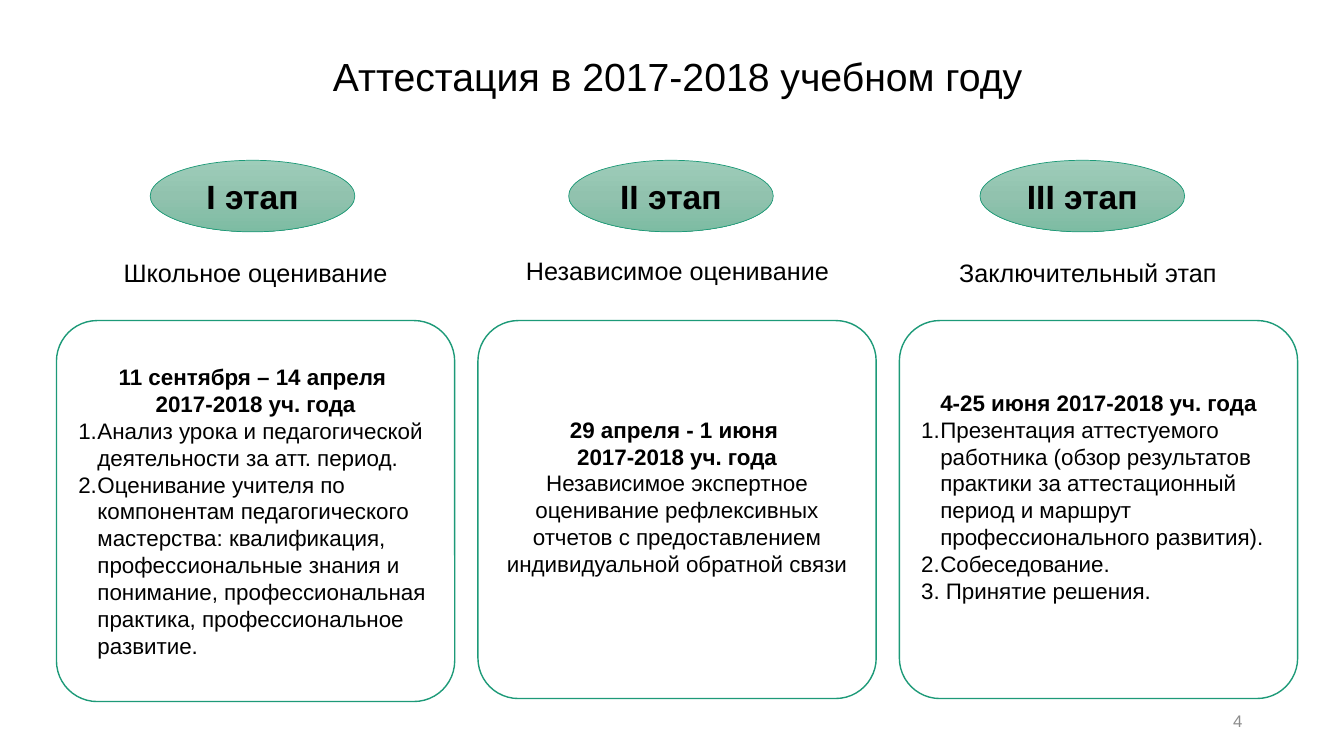
from copy import deepcopy

from lxml import etree
from pptx import Presentation
from pptx.dml.color import RGBColor
from pptx.enum import shapes, text
from pptx.oxml.ns import qn
from pptx.util import Inches, Pt

BLACK = RGBColor(0x00, 0x00, 0x00)
WHITE = RGBColor(0xFF, 0xFF, 0xFF)
GREY = RGBColor(0x8C, 0x8C, 0x8C)
GREEN = RGBColor(0x1D, 0x9A, 0x78)
OVAL_SHADES = [
    (0, RGBColor(0x9E, 0xCD, 0xBA)),
    (0.5, RGBColor(0x91, 0xC2, 0xAE)),
    (1, RGBColor(0x7D, 0xBC, 0xA3)),
]
CENTER, LEFT, RIGHT = text.PP_ALIGN.CENTER, text.PP_ALIGN.LEFT, text.PP_ALIGN.RIGHT
MIDDLE, TOP = text.MSO_ANCHOR.MIDDLE, text.MSO_ANCHOR.TOP

presentation = Presentation()
presentation.slide_width = Inches(13.33)
presentation.slide_height = Inches(7.5)
slide = presentation.slides.add_slide(presentation.slide_layouts[6])


def style(paragraph, size, align=CENTER, bold=False, color=BLACK):
    paragraph.alignment = align
    for run in paragraph.runs:
        run.font.name = "Arial"
        run.font.size = Pt(size)
        run.font.bold = bold
        run.font.color.rgb = color


def add_label(words, box, size, align=CENTER, anchor=TOP, color=BLACK, wrap=True):
    label = slide.shapes.add_textbox(*map(Inches, box))
    label.text_frame.word_wrap = wrap
    label.text_frame.vertical_anchor = anchor
    label.text_frame.text = words
    style(label.text_frame.paragraphs[0], size, align, color=color)


stages = [
    dict(
        name="I этап", oval_left=1.49,
        subtitle="Школьное оценивание ", subtitle_box=(1.11, 2.5, 2.92, 0.4),
        card_height=3.78, bottom_inset=0.05,
        lines=[
            ("date", "11 сентября – 14 апреля "),
            ("date", "2017-2018 уч. года"),
            ("numbered", "Анализ урока и педагогической деятельности за атт. период."),
            ("numbered", "Оценивание учителя по компонентам педагогического мастерства: "
                         "квалификация, профессиональные знания и понимание, "
                         "профессиональная практика, профессиональное развитие."),
        ],
    ),
    dict(
        name="II этап", oval_left=5.64,
        subtitle="Независимое оценивание", subtitle_box=(5.1, 2.48, 3.24, 0.4),
        card_height=3.75, bottom_inset=0.31,
        lines=[
            ("date", "29 апреля - 1 июня "),
            ("date", "2017-2018 уч. года"),
            ("centered", "Независимое экспертное оценивание рефлексивных отчетов "
                         "с предоставлением индивидуальной обратной связи"),
        ],
    ),
    dict(
        name="III этап", oval_left=9.72,
        subtitle="Заключительный этап", subtitle_box=(9.4, 2.5, 2.78, 0.4),
        card_height=3.75, bottom_inset=0.31,
        lines=[
            ("date", "4-25 июня 2017-2018 уч. года"),
            ("numbered", "Презентация аттестуемого работника (обзор результатов практики "
                         "за аттестационный период и маршрут профессионального развития)."),
            ("numbered", "Собеседование."),
            ("plain", "3. Принятие решения."),
        ],
    ),
]

add_label("Аттестация в 2017-2018 учебном году", (0.74, 0.47, 11.96, 0.57), 28)

for column, stage in enumerate(stages):
    oval = slide.shapes.add_shape(
        shapes.MSO_SHAPE.OVAL,
        Inches(stage["oval_left"]), Inches(1.59), Inches(2.03), Inches(0.71))
    oval.shadow.inherit = False
    oval.fill.gradient()
    oval.fill.gradient_angle = 270
    first_stop = oval._element.spPr.find(".//" + qn("a:gs"))
    first_stop.addnext(deepcopy(first_stop))
    for stop, (position, shade) in zip(oval.fill.gradient_stops, OVAL_SHADES):
        stop.position = position
        stop.color.rgb = shade
    oval.line.color.rgb = GREEN
    oval.line.width = Pt(0.5)
    oval.text_frame.vertical_anchor = MIDDLE
    oval.text_frame.text = stage["name"]
    style(oval.text_frame.paragraphs[0], 24, bold=True)

    add_label(stage["subtitle"], stage["subtitle_box"], 18, wrap=False)

    card = slide.shapes.add_shape(
        shapes.MSO_SHAPE.ROUNDED_RECTANGLE,
        Inches(0.56 + 4.18 * column), Inches(3.18),
        Inches(3.95), Inches(stage["card_height"]))
    card.adjustments[0] = 0.107
    card.shadow.inherit = False
    card.fill.solid()
    card.fill.fore_color.rgb = WHITE
    card.line.color.rgb = GREEN
    card.line.width = Pt(1)
    frame = card.text_frame
    frame.word_wrap = True
    frame.vertical_anchor = MIDDLE
    frame.margin_bottom = Inches(stage["bottom_inset"])
    frame.text = "\n".join(words for role, words in stage["lines"])
    for paragraph, (role, words) in zip(frame.paragraphs, stage["lines"]):
        style(paragraph, 16, CENTER if role in ("date", "centered") else LEFT,
              bold=role == "date")
        if role == "numbered":
            properties = paragraph._p.get_or_add_pPr()
            properties.set("marL", str(Inches(0.19)))
            properties.set("indent", str(-Inches(0.19)))
            etree.SubElement(properties, qn("a:buAutoNum"), type="arabicPeriod")

add_label("4", (9.42, 6.95, 3, 0.4), 12, RIGHT, MIDDLE, GREY)

presentation.save("out.pptx")
